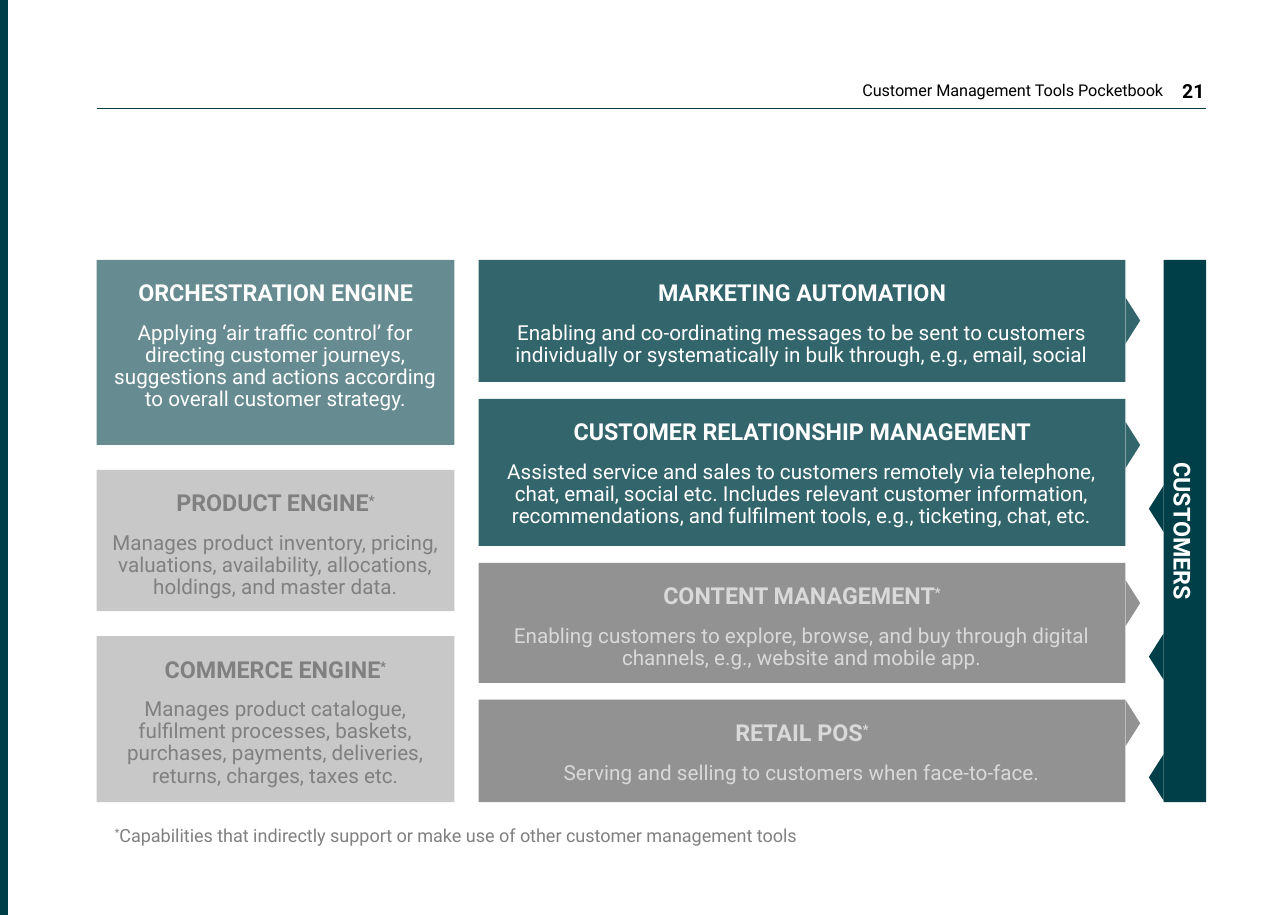
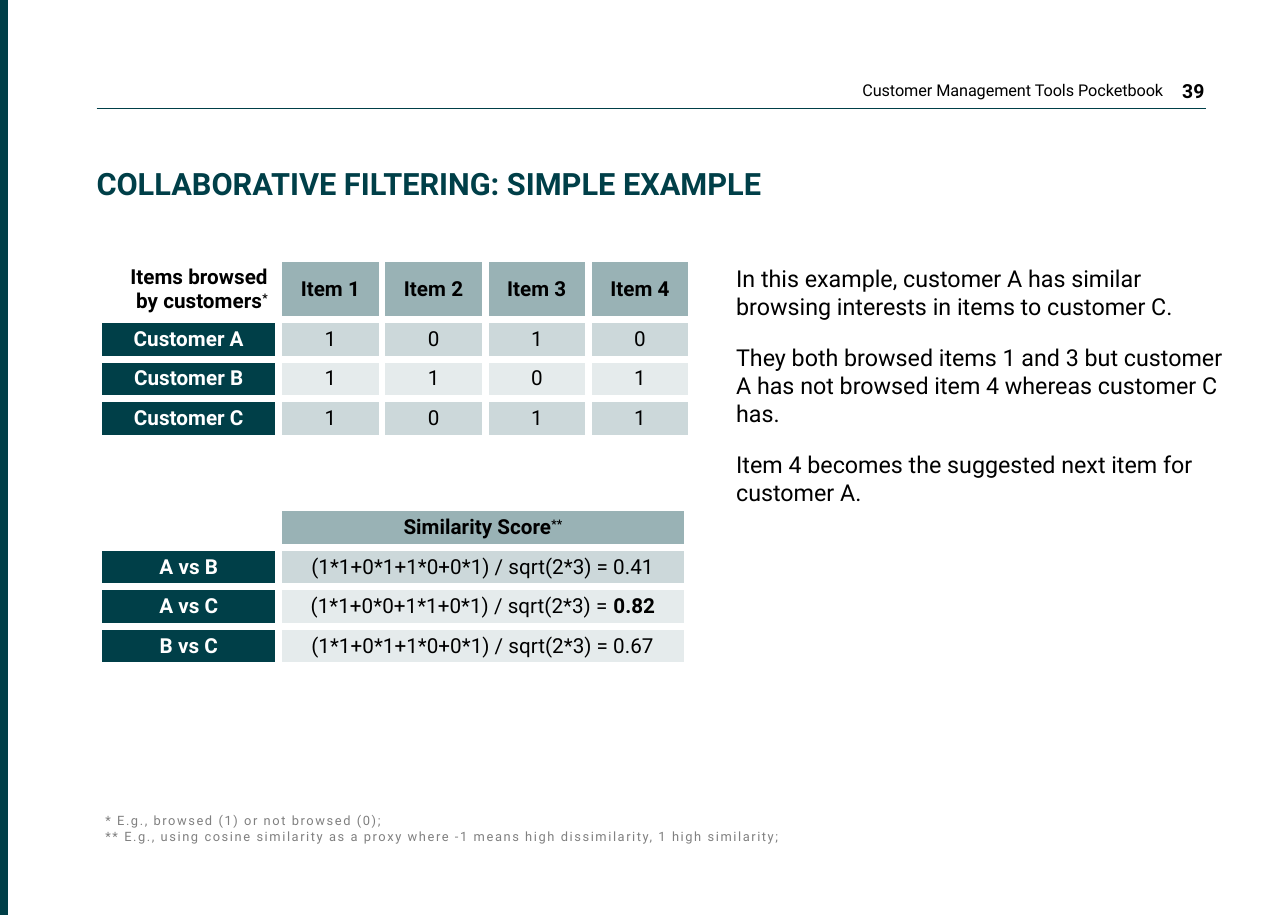
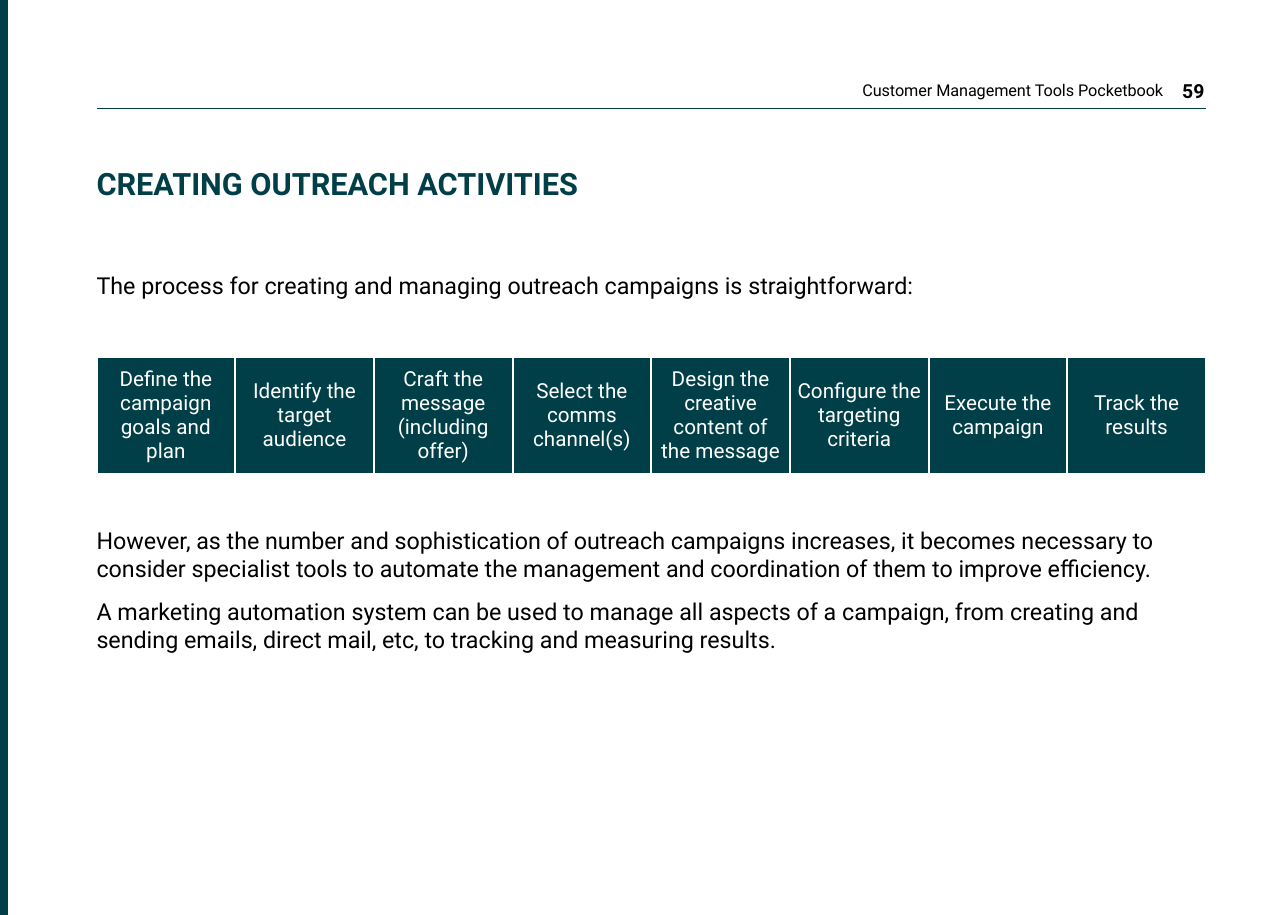
"""Build three pocketbook slides about customer management tools."""
from dataclasses import dataclass
from typing import NamedTuple, Optional, Sequence

from lxml.etree import SubElement
from pptx import Presentation
from pptx.dml.color import RGBColor
from pptx.enum.shapes import MSO_CONNECTOR, MSO_SHAPE
from pptx.enum.text import MSO_ANCHOR, PP_ALIGN
from pptx.oxml.ns import qn
from pptx.util import Cm, Pt


class Paint(NamedTuple):
    color: str
    opacity: int = 100


class Margins(NamedTuple):
    left: float
    top: float
    right: float
    bottom: float


class Box(NamedTuple):
    left: float
    top: float
    width: float
    height: float


class Span(NamedTuple):
    text: str
    size: Optional[float] = None
    bold: Optional[bool] = None
    raised: bool = False


@dataclass(frozen=True)
class Theme:
    font: str = "Roboto"
    teal: str = "003F48"
    gray: str = "777777"
    muted: str = "808080"
    pale: str = "D9D9D9"
    white: str = "FFFFFF"
    black: str = "000000"
    title_size: float = 11.9
    body_size: float = 9
    small_size: float = 8
    note_size: float = 7
    header_size: float = 6.3
    page_size: float = 7.5
    fine_size: float = 5


@dataclass(frozen=True)
class Card:
    title: str
    body: str
    height: float
    paint: Paint
    color: str
    starred: bool = False
    outgoing: Optional[float] = None
    incoming: Optional[float] = None


@dataclass(frozen=True)
class Cell:
    spans: Sequence[Span] = ()
    paint: Optional[Paint] = None
    color: str = "000000"
    bold: bool = False
    align: PP_ALIGN = PP_ALIGN.CENTER
    margins: Margins = Margins(0.1, 0.1, 0.1, 0.1)


THEME = Theme()
PAGE_WIDTH, PAGE_HEIGHT = 17.6, 12.5
LEFT, CONTENT_WIDTH = 1.32, 15.16
DEFAULT_MARGINS = Margins(0.25, 0.13, 0.25, 0.13)
FLUSH_MARGINS = Margins(0, 0.13, 0, 0.13)
LABEL_MARGINS = Margins(0.15, 0.08, 0.15, 0.08)

SOLID = Paint(THEME.teal)
TEAL_80, TEAL_60, TEAL_40, TEAL_20, TEAL_10 = (
    Paint(THEME.teal, opacity) for opacity in (80, 60, 40, 20, 10))
GRAY_80, GRAY_40 = Paint(THEME.gray, 80), Paint(THEME.gray, 40)

CARD_TOP, CARD_BOTTOM = 3.55, 10.96
ARROW_LENGTH, ARROW_WIDTH = 0.2, 0.63
BAR_LEFT, BAR_WIDTH = 15.9, 0.58

ENGINES = [
    Card("ORCHESTRATION ENGINE",
         "Applying ‘air traffic control’ for directing customer journeys, "
         "suggestions and actions according to overall customer strategy.",
         2.53, TEAL_60, THEME.white),
    Card("PRODUCT ENGINE",
         "Manages product inventory, pricing, valuations, availability, "
         "allocations, holdings, and master data.",
         1.93, GRAY_40, THEME.muted, True),
    Card("COMMERCE ENGINE",
         "Manages product catalogue, fulfilment processes, baskets, purchases, "
         "payments, deliveries, returns, charges, taxes etc.",
         2.27, GRAY_40, THEME.muted, True),
]
CHANNELS = [
    Card("MARKETING AUTOMATION",
         "Enabling and co-ordinating messages to be sent to customers "
         "individually or systematically in bulk through, e.g., email, social",
         1.67, TEAL_80, THEME.white, outgoing=4.38),
    Card("CUSTOMER RELATIONSHIP MANAGEMENT",
         "Assisted service and sales to customers remotely via telephone, chat, "
         "email, social etc. Includes relevant customer information, "
         "recommendations, and fulfilment tools, e.g., ticketing, chat, etc.",
         2.01, TEAL_80, THEME.white, outgoing=6.08, incoming=6.95),
    Card("CONTENT MANAGEMENT",
         "Enabling customers to explore, browse, and buy through digital "
         "channels, e.g., website and mobile app.",
         1.64, GRAY_80, THEME.pale, True, 8.24, 8.97),
    Card("RETAIL POS", "Serving and selling to customers when face-to-face.",
         1.4, GRAY_80, THEME.pale, True, 9.88, 10.62),
]
BROWSED = {"Customer A": "1010", "Customer B": "1101", "Customer C": "1011"}
SCORES = [
    ("A vs B", "(1*1+0*1+1*0+0*1) / sqrt(2*3) = ", "0.41", False, TEAL_20),
    ("A vs C", "(1*1+0*0+1*1+0*1) / sqrt(2*3) = ", "0.82", True, TEAL_10),
    ("B vs C", "(1*1+0*1+1*0+0*1) / sqrt(2*3) = ", "0.67", False, TEAL_10),
]
STEPS = [
    "Define the campaign goals and plan", "Identify the target audience",
    "Craft the message (including offer)", "Select the comms channel(s)",
    "Design the creative content of the message",
    "Configure the targeting criteria", "Execute the campaign",
    "Track the results",
]


def apply_fill(fill, properties, paint: Optional[Paint]) -> None:
    """Fill an object with a colour and its opacity, or with nothing."""
    if paint is None:
        fill.background()
        return
    fill.solid()
    fill.fore_color.rgb = RGBColor.from_string(paint.color)
    if paint.opacity < 100:
        color = properties.find(qn("a:solidFill")).find(qn("a:srgbClr"))
        SubElement(color, qn("a:alpha")).set("val", str(paint.opacity * 1000))


def write_text(frame, paragraphs: Sequence[Sequence[Span]], *, size: float,
               color: str = THEME.black, bold: bool = False,
               align: PP_ALIGN = PP_ALIGN.LEFT, line_spacing: float = 1.0,
               space_after: float = 0, tracking: float = 0) -> None:
    """Write paragraphs of spans in one format."""
    for index, spans in enumerate(paragraphs):
        paragraph = frame.add_paragraph() if index else frame.paragraphs[0]
        paragraph.alignment = align
        paragraph.line_spacing = line_spacing
        paragraph.space_after = Pt(space_after)
        for span in spans:
            run = paragraph.add_run()
            run.text = span.text
            run.font.name = THEME.font
            run.font.size = Pt(span.size or size)
            run.font.bold = bold if span.bold is None else span.bold
            run.font.color.rgb = RGBColor.from_string(color)
            properties = run._r.get_or_add_rPr()
            if span.raised:
                properties.set("baseline", "30000")
            if tracking:
                properties.set("spc", str(round(tracking * 100)))
        if not spans:
            paragraph._p.get_or_add_endParaRPr().set("sz", str(round(size * 100)))


def set_frame(frame, margins: Margins, anchor: MSO_ANCHOR) -> None:
    """Set wrapping, insets and anchor of a text frame."""
    frame.word_wrap = True
    frame.vertical_anchor = anchor
    frame.margin_left, frame.margin_top, frame.margin_right, frame.margin_bottom = (
        Cm(margin) for margin in margins)


def add_text(slide, box: Box, paragraphs: Sequence[Sequence[Span]], *,
             margins: Margins = DEFAULT_MARGINS,
             anchor: MSO_ANCHOR = MSO_ANCHOR.TOP, **text_format) -> None:
    """Add a text box."""
    shape = slide.shapes.add_textbox(*(Cm(length) for length in box))
    set_frame(shape.text_frame, margins, anchor)
    write_text(shape.text_frame, paragraphs, **text_format)


def add_block(slide, box: Box, paint: Paint, *,
              preset: MSO_SHAPE = MSO_SHAPE.RECTANGLE, rotation: int = 0):
    """Add a filled shape; a turned one is given by the area it covers."""
    left, top, width, height = box
    if rotation:
        left, top = left + (width - height) / 2, top + (height - width) / 2
        width, height = height, width
    shape = slide.shapes.add_shape(preset, Cm(left), Cm(top), Cm(width), Cm(height))
    shape.rotation = rotation
    shape.shadow.inherit = False
    shape.line.fill.background()
    apply_fill(shape.fill, shape._element.spPr, paint)
    return shape


def add_arrow(slide, left: float, middle: float, paint: Paint, rotation: int) -> None:
    """Add a small sideways triangle."""
    box = Box(left, middle - ARROW_WIDTH / 2, ARROW_LENGTH, ARROW_WIDTH)
    add_block(slide, box, paint, preset=MSO_SHAPE.ISOSCELES_TRIANGLE, rotation=rotation)


def add_cards(slide, cards: Sequence[Card], left: float, width: float) -> None:
    """Stack cards with equal gaps over the full height."""
    free = CARD_BOTTOM - CARD_TOP - sum(card.height for card in cards)
    gap = free / (len(cards) - 1)
    top = CARD_TOP
    for card in cards:
        shape = add_block(slide, Box(left, top, width, card.height), card.paint)
        title = [Span(card.title, THEME.body_size, True)]
        if card.starred:
            title.append(Span("*", THEME.body_size, True, True))
        set_frame(shape.text_frame, Margins(0.1, 0.3, 0.1, 0.3), MSO_ANCHOR.TOP)
        write_text(shape.text_frame, [title, [Span(card.body)]],
                   size=THEME.small_size, color=card.color,
                   align=PP_ALIGN.CENTER, line_spacing=0.9, space_after=6)
        if card.outgoing:
            add_arrow(slide, left + width, card.outgoing, card.paint, 90)
        if card.incoming:
            add_arrow(slide, BAR_LEFT - ARROW_LENGTH, card.incoming, SOLID, 270)
        top += card.height + gap


def add_grid(slide, left: float, top: float, widths: Sequence[float],
             heights: Sequence[float], rows: Sequence[Sequence[Cell]],
             border: float) -> None:
    """Add a table with white borders."""
    frame = slide.shapes.add_table(len(rows), len(widths), Cm(left), Cm(top),
                                   Cm(sum(widths)), Cm(sum(heights)))
    table = frame.table
    table.first_row = table.horz_banding = False
    for column, width in zip(table.columns, widths):
        column.width = Cm(width)
    for table_row, height, row in zip(table.rows, heights, rows):
        table_row.height = Cm(height)
        for target, cell in zip(table_row.cells, row):
            properties = target._tc.get_or_add_tcPr()
            for side in ("a:lnL", "a:lnR", "a:lnT", "a:lnB"):
                line = SubElement(properties, qn(side), w=str(Pt(border)))
                solid = SubElement(line, qn("a:solidFill"))
                SubElement(solid, qn("a:srgbClr"), val=THEME.white)
            apply_fill(target.fill, properties, cell.paint)
            target.vertical_anchor = MSO_ANCHOR.MIDDLE
            (target.margin_left, target.margin_top, target.margin_right,
             target.margin_bottom) = (Cm(margin) for margin in cell.margins)
            write_text(target.text_frame, [cell.spans], size=THEME.small_size,
                       color=cell.color, bold=cell.bold, align=cell.align)


def add_page(presentation, number: int, title: str = ""):
    """Add a slide with side band, running header and optional title."""
    slide = presentation.slides.add_slide(presentation.slide_layouts[6])
    add_block(slide, Box(0, 0, 0.11, PAGE_HEIGHT), SOLID)
    add_text(slide, Box(9.22, 0.97, 6.93, 0.53),
             [[Span("Customer Management Tools Pocketbook")]],
             anchor=MSO_ANCHOR.MIDDLE, size=THEME.header_size, align=PP_ALIGN.RIGHT)
    add_text(slide, Box(15.77, 0.94, 0.84, 0.61), [[Span(str(number))]],
             margins=LABEL_MARGINS, anchor=MSO_ANCHOR.MIDDLE,
             size=THEME.page_size, bold=True, align=PP_ALIGN.RIGHT)
    rule = slide.shapes.add_connector(
        MSO_CONNECTOR.STRAIGHT, Cm(LEFT), Cm(1.48), Cm(LEFT + CONTENT_WIDTH), Cm(1.48))
    rule.line.color.rgb = RGBColor.from_string(THEME.teal)
    rule.line.width = Pt(0.5)
    SubElement(rule._element.spPr, qn("a:effectLst"))
    if title:
        add_text(slide, Box(LEFT, 2.16, 12.8, 0.76), [[Span(title)]],
                 margins=Margins(0, 0.08, 0.15, 0.08), anchor=MSO_ANCHOR.MIDDLE,
                 size=THEME.title_size, color=THEME.teal, bold=True, line_spacing=0.9)
    return slide


def build_tools(presentation) -> None:
    """Build the map of customer management tools."""
    slide = add_page(presentation, 21)
    add_cards(slide, ENGINES, LEFT, 4.89)
    add_cards(slide, CHANNELS, 6.54, 8.84)
    bar = add_block(slide, Box(BAR_LEFT, CARD_TOP, BAR_WIDTH, CARD_BOTTOM - CARD_TOP),
                    SOLID, rotation=90)
    set_frame(bar.text_frame, Margins(0.1, 0.1, 0.1, 0), MSO_ANCHOR.MIDDLE)
    write_text(bar.text_frame, [[Span("CUSTOMERS")]], size=THEME.body_size,
               color=THEME.white, bold=True, align=PP_ALIGN.CENTER,
               line_spacing=0.9, space_after=6)
    add_text(slide, Box(LEFT, 11.13, 10.41, 0.56),
             [[Span("*", raised=True),
               Span("Capabilities that indirectly support or make use of other "
                    "customer management tools")]],
             size=THEME.note_size, color=THEME.muted)


def row_label(text: str) -> Cell:
    """Make a dark row heading."""
    return Cell([Span(text)], SOLID, THEME.white, True, margins=LABEL_MARGINS)


def build_filtering(presentation) -> None:
    """Build the collaborative filtering example."""
    slide = add_page(presentation, 39, "COLLABORATIVE FILTERING: SIMPLE EXAMPLE")
    corner = Cell([Span("Items browsed by customers"), Span("*", raised=True)],
                  bold=True, align=PP_ALIGN.RIGHT, margins=LABEL_MARGINS)
    items = [Cell([Span(f"Item {number}")], TEAL_40, bold=True) for number in range(1, 5)]
    browsed = [[corner, *items]]
    for index, (customer, marks) in enumerate(BROWSED.items()):
        paint = TEAL_10 if index % 2 else TEAL_20
        browsed.append([row_label(customer),
                        *(Cell([Span(mark)], paint) for mark in marks)])
    add_grid(slide, 1.35, 3.53, [2.46] + [1.41] * 4, [0.82] + [0.53] * 3, browsed, 3)

    heading = Cell([Span("Similarity Score"), Span("**", raised=True)], TEAL_40, bold=True)
    scores = [[Cell(), heading]]
    for pair, formula, score, best, paint in SCORES:
        scores.append([row_label(pair),
                       Cell([Span(formula), Span(score, bold=best)], paint)])
    add_grid(slide, 1.35, 6.94, [2.46, 5.58], [0.53] * 4, scores, 3)

    add_text(slide, Box(1.34, 10.97, 10.88, 0.69),
             [[Span("* E.g., browsed (1) or not browsed (0);")],
              [Span("** E.g., using cosine similarity as a proxy where -1 means "
                    "high dissimilarity, 1 high similarity;")]],
             margins=Margins(0.1, 0.13, 0.1, 0.13), anchor=MSO_ANCHOR.MIDDLE,
             size=THEME.fine_size, color=THEME.muted, tracking=0.6)
    add_text(slide, Box(10.06, 3.48, 6.8, 3.58),
             [[Span("In this example, customer A has similar browsing interests "
                    "in items to customer C.")],
              [Span("They both browsed items 1 and 3 but customer A has not "
                    "browsed item 4 whereas customer C has.")],
              [Span("Item 4 becomes the suggested next item for customer A.")]],
             margins=FLUSH_MARGINS, size=THEME.body_size, space_after=9)


def build_outreach(presentation) -> None:
    """Build the outreach process."""
    slide = add_page(presentation, 59, "CREATING OUTREACH ACTIVITIES")
    add_text(slide, Box(LEFT, 3.58, CONTENT_WIDTH, 0.63),
             [[Span("The process for creating and managing outreach campaigns is "
                    "straightforward:")]],
             margins=FLUSH_MARGINS, size=THEME.body_size, space_after=6)
    steps = [Cell([Span(step)], SOLID, THEME.white,
                  margins=Margins(0.09, 0.13, 0.09, 0.13)) for step in STEPS]
    add_grid(slide, LEFT, 4.87, [CONTENT_WIDTH / len(STEPS)] * len(STEPS), [1.6],
             [steps], 1)
    add_text(slide, Box(LEFT, 7.06, CONTENT_WIDTH, 2.01),
             [[Span("However, as the number and sophistication of outreach campaigns "
                    "increases, it becomes necessary to consider specialist tools to "
                    "automate the management and coordination of them to improve "
                    "efficiency.")],
              [Span("A marketing automation system can be used to manage all aspects "
                    "of a campaign, from creating and sending emails, direct mail, "
                    "etc, to tracking and measuring results.")]],
             margins=FLUSH_MARGINS, size=THEME.body_size, space_after=6)


def main() -> None:
    """Build and save the presentation."""
    presentation = Presentation()
    presentation.slide_width, presentation.slide_height = Cm(PAGE_WIDTH), Cm(PAGE_HEIGHT)
    build_tools(presentation)
    build_filtering(presentation)
    build_outreach(presentation)
    presentation.save("out.pptx")


if __name__ == "__main__":
    main()
